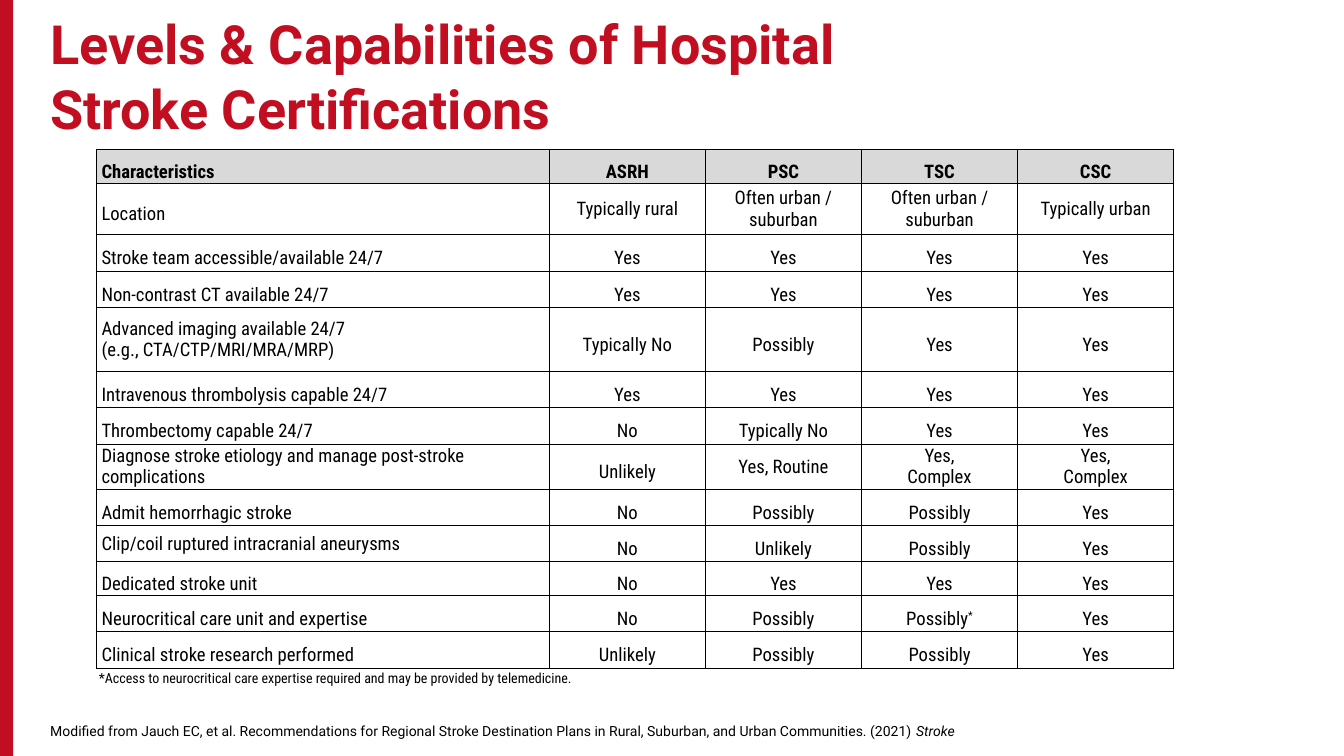
"""Build the slide on levels and capabilities of hospital stroke certifications."""
from lxml import etree
from pptx import Presentation
from pptx.dml.color import RGBColor
from pptx.enum.shapes import MSO_SHAPE
from pptx.enum.text import MSO_ANCHOR, PP_ALIGN
from pptx.oxml import parse_xml
from pptx.util import Cm, Pt

RECTANGLE = MSO_SHAPE.RECTANGLE
MIDDLE, BOTTOM = MSO_ANCHOR.MIDDLE, MSO_ANCHOR.BOTTOM
LEFT, CENTER = PP_ALIGN.LEFT, PP_ALIGN.CENTER
RED, BLACK, GRAY, WHITE = "C10E21", "000000", "D9D9D9", "FFFFFF"
NAMESPACE = "http://schemas.openxmlformats.org/drawingml/2006/main"


def color(hex_value):
    return RGBColor.from_string(hex_value)


def add_text(paragraph, text, font="Roboto Condensed", size=16, fill=BLACK,
             bold=False, italic=False, superscript=False):
    first_line, *other_lines = text.split("\v")
    for index, line in enumerate([first_line, *other_lines]):
        if index:
            paragraph.add_line_break()
        run = paragraph.add_run()
        run.text = line
        run.font.name = font
        run.font.size = Pt(size)
        run.font.bold = bold
        run.font.italic = italic
        run.font.color.rgb = color(fill)
        if superscript:
            run._r.get_or_add_rPr().set("baseline", "30000")


presentation = Presentation()
presentation.slide_width = Cm(40.64)
presentation.slide_height = Cm(22.86)
slide = presentation.slides.add_slide(presentation.slide_layouts[6])

side_bar = slide.shapes.add_shape(RECTANGLE, 0, 0, Cm(0.4), Cm(22.86))
side_bar.shadow.inherit = False
side_bar.fill.solid()
side_bar.fill.fore_color.rgb = color(RED)
side_bar.line.fill.background()

title = slide.shapes.add_textbox(Cm(1.27), Cm(2.03), Cm(35.89), Cm(2.34))
title.text_frame.word_wrap = True
title.text_frame.vertical_anchor = BOTTOM
add_text(title.text_frame.paragraphs[0],
         "Levels & Capabilities of Hospital\vStroke Certifications",
         font="Roboto", size=46.3, fill=RED, bold=True)

rows = [
    (0.97, "Characteristics", "ASRH", "PSC", "TSC", "CSC"),
    (1.56, "Location", "Typically rural", "Often urban / suburban",
     "Often urban / suburban", "Typically urban"),
    (1.1, "Stroke team accessible/available 24/7", "Yes", "Yes", "Yes", "Yes"),
    (1.1, "Non-contrast CT available 24/7", "Yes", "Yes", "Yes", "Yes"),
    (1.94, "Advanced imaging available 24/7\n(e.g., CTA/CTP/MRI/MRA/MRP)",
     "Typically No", "Possibly", "Yes", "Yes"),
    (1.1, "Intravenous thrombolysis capable 24/7", "Yes", "Yes", "Yes", "Yes"),
    (1.1, "Thrombectomy capable 24/7", "No", "Typically No", "Yes", "Yes"),
    (1.3, "Diagnose stroke etiology and manage post-stroke complications",
     "Unlikely", "Yes, Routine", "Yes,\nComplex", "Yes,\nComplex"),
    (1.1, "Admit hemorrhagic stroke", "No", "Possibly", "Possibly", "Yes"),
    (1.1, "Clip/coil ruptured intracranial aneurysms",
     "No", "Unlikely", "Possibly", "Yes"),
    (0.97, "Dedicated stroke unit", "No", "Yes", "Yes", "Yes"),
    (1.1, "Neurocritical care unit and expertise",
     "No", "Possibly", "Possibly*", "Yes"),
    (1.1, "Clinical stroke research performed",
     "Unlikely", "Possibly", "Possibly", "Yes"),
]
single_spaced = {
    "Typically rural", "Often urban / suburban", "Typically urban", "Yes, Routine",
    "Diagnose stroke etiology and manage post-stroke complications",
    "Clip/coil ruptured intracranial aneurysms",
}
column_widths = [13.69] + [4.72] * 4

table = slide.shapes.add_table(
    len(rows), len(column_widths), Cm(2.92), Cm(4.52),
    Cm(sum(column_widths)), Cm(sum(row[0] for row in rows))).table
table.first_row = False
table.horz_banding = False
for column, width in zip(table.columns, column_widths):
    column.width = Cm(width)

for row_index, (height, *texts) in enumerate(rows):
    table.rows[row_index].height = Cm(height)
    is_header = row_index == 0
    for column_index, text in enumerate(texts):
        cell = table.cell(row_index, column_index)
        cell.margin_left = cell.margin_right = Cm(0.15)
        cell.margin_top = cell.margin_bottom = 0
        cell.vertical_anchor = MIDDLE
        properties = cell._tc.get_or_add_tcPr()
        for side in ("lnL", "lnR", "lnT", "lnB"):
            border = parse_xml(f'<a:{side} xmlns:a="{NAMESPACE}" w="12700"/>')
            solid_fill = etree.SubElement(border, f"{{{NAMESPACE}}}solidFill")
            etree.SubElement(solid_fill, f"{{{NAMESPACE}}}srgbClr", val=BLACK)
            properties.append(border)
        cell.fill.solid()
        cell.fill.fore_color.rgb = color(GRAY if is_header else WHITE)

        lines = text.split("\n")
        is_single = len(lines) > 1 or text in single_spaced
        for line_index, line in enumerate(lines):
            frame = cell.text_frame
            paragraph = frame.add_paragraph() if line_index else frame.paragraphs[0]
            paragraph.alignment = CENTER if column_index else LEFT
            paragraph.line_spacing = 1.0 if is_single else 1.5
            add_text(paragraph, line.rstrip("*"), bold=is_header)
            if line.endswith("*"):
                add_text(paragraph, "*", superscript=True)

footnote = slide.shapes.add_textbox(Cm(2.74), Cm(20.12), Cm(17.98), Cm(0.76))
footnote.text_frame.word_wrap = True
add_text(footnote.text_frame.paragraphs[0],
         "*Access to neurocritical care expertise required and may be provided"
         " by telemedicine.", size=12)

citation = slide.shapes.add_textbox(Cm(1.27), Cm(21.72), Cm(31.12), Cm(0.76))
citation.text_frame.word_wrap = True
citation_paragraph = citation.text_frame.paragraphs[0]
add_text(citation_paragraph,
         "Modified from Jauch EC, et al. Recommendations for Regional Stroke Destination"
         " Plans in Rural, Suburban, and Urban Communities. (2021) ",
         font="Roboto", size=12)
add_text(citation_paragraph, "Stroke", font="Roboto", size=12, italic=True)

presentation.save("out.pptx")
